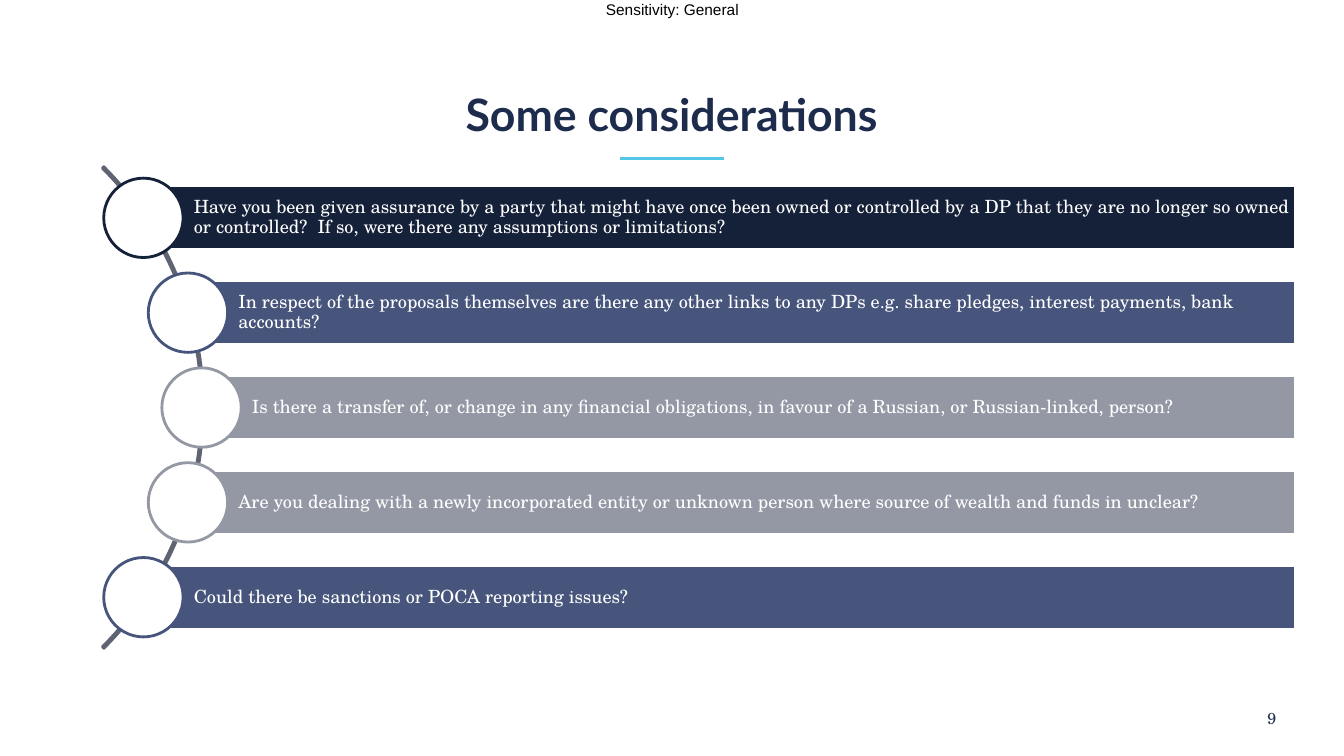
import math
import pptx
import pptx.util
import pptx.dml.color
import pptx.enum.shapes
import pptx.enum.text
import pptx.oxml.ns
import lxml.etree

Cm = pptx.util.Cm
Pt = pptx.util.Pt
RGB = pptx.dml.color.RGBColor.from_string
SHAPE = pptx.enum.shapes.MSO_SHAPE
ANCHOR = pptx.enum.text.MSO_ANCHOR
ALIGN = pptx.enum.text.PP_ALIGN

COLORS = {
    "white": "FFFFFF",
    "black": "000000",
    "ink": "1D2B4D",
    "accent": "52C7E6",
    "arc": "606472",
    "navy": "152039",
    "blue": "47557C",
    "grey": "9498A5",
}
SERIF = "TeX Gyre Schola"


def write(sp, text, font=SERIF, size=13, color="white", bold=False,
          align=ALIGN.LEFT, anchor=ANCHOR.MIDDLE, insets=(0, 0, 0, 0),
          spacing=1.0, wrap=True):
    tf = sp.text_frame
    tf.word_wrap = wrap
    tf.vertical_anchor = anchor
    tf.margin_left, tf.margin_top, tf.margin_right, tf.margin_bottom = map(Cm, insets)
    p = tf.paragraphs[0]
    p.alignment = align
    p.line_spacing = spacing
    r = p.add_run()
    r.text = text
    r.font.name = font
    r.font.size = Pt(size)
    r.font.bold = bold
    r.font.color.rgb = RGB(COLORS[color])


def draw(preset, x, y, w, h, line, fill=None):
    sp = s.shapes.add_shape(preset, Cm(x), Cm(y), Cm(w), Cm(h))
    sp.shadow.inherit = False
    if fill:
        sp.fill.solid()
        sp.fill.fore_color.rgb = RGB(COLORS[fill])
    else:
        sp.fill.background()
    sp.line.color.rgb = RGB(COLORS[line])
    sp.line.width = Pt(2)
    return sp


prs = pptx.Presentation()
prs.slide_width = Cm(33.87)
prs.slide_height = Cm(19.05)
s = prs.slides.add_slide(prs.slide_layouts[6])

sensitivity = s.shapes.add_textbox(Cm(15.27), Cm(0), Cm(3.45), Cm(0.46))
write(sensitivity, "Sensitivity: General", font="Arial", size=11, color="black",
      anchor=ANCHOR.TOP, wrap=False)

rule = s.shapes.add_connector(pptx.enum.shapes.MSO_CONNECTOR.STRAIGHT,
                              Cm(15.62), Cm(3.99), Cm(18.24), Cm(3.99))
rule.line.color.rgb = RGB(COLORS["accent"])
rule.line.width = Pt(2.5)
lxml.etree.SubElement(rule._element.spPr, pptx.oxml.ns.qn("a:effectLst"))

title = s.shapes.add_textbox(Cm(5.13), Cm(1.02), Cm(23.6), Cm(2.51))
write(title, "Some considerations", font="Lato", size=31.9, color="ink", bold=True,
      align=ALIGN.CENTER, anchor=ANCHOR.BOTTOM)

center_x, center_y, radius = -3.45, 10.27, 8.58
arc = draw(SHAPE.BLOCK_ARC, center_x - radius, center_y - radius,
           2 * radius, 2 * radius, "arc")
arc.adjustments[0] = 189
arc.adjustments[1] = 27
arc.adjustments[2] = 0.003

considerations = [
    ("navy", "Have you been given assurance by a party that might have once been owned "
             "or controlled by a DP that they are no longer so owned or controlled?  "
             "If so, were there any assumptions or limitations?"),
    ("blue", "In respect of the proposals themselves are there any other links to any DPs "
             "e.g. share pledges, interest payments, bank accounts?"),
    ("grey", "Is there a transfer of, or change in any financial obligations, in favour of "
             "a Russian, or Russian-linked, person?"),
    ("grey", "Are you dealing with a newly incorporated entity or unknown person where "
             "source of wealth and funds in unclear?"),
    ("blue", "Could there be sanctions or POCA reporting issues?"),
]
pitch, bar_right, bar_height, circle = 2.39, 32.65, 1.6, 2.0
circle_orbit = 8.53

for i, (color, text) in enumerate(considerations):
    offset = (i - 2) * pitch
    x = center_x + math.sqrt(circle_orbit ** 2 - offset ** 2)
    y = center_y + offset
    bar = draw(SHAPE.RECTANGLE, x, y - bar_height / 2, bar_right - x, bar_height,
               "white", color)
    write(bar, text, insets=(1.27, 0.1, 0.1, 0.1), spacing=0.9)
    draw(SHAPE.OVAL, x - circle / 2, y - circle / 2, circle, circle, color, "white")

number = s.shapes.add_textbox(Cm(29.87), Cm(17.81), Cm(2.29), Cm(0.56))
write(number, "9", size=11.4, color="ink", align=ALIGN.RIGHT)

prs.save("out.pptx")
